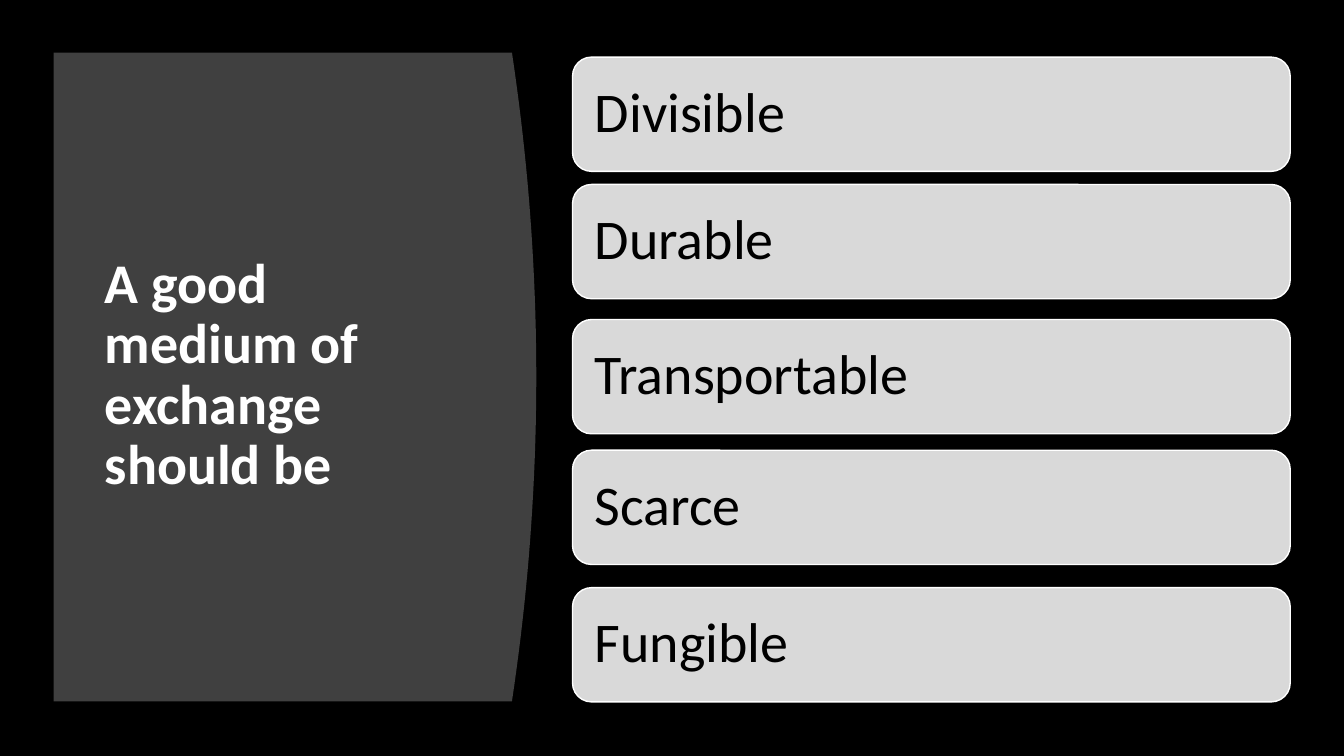
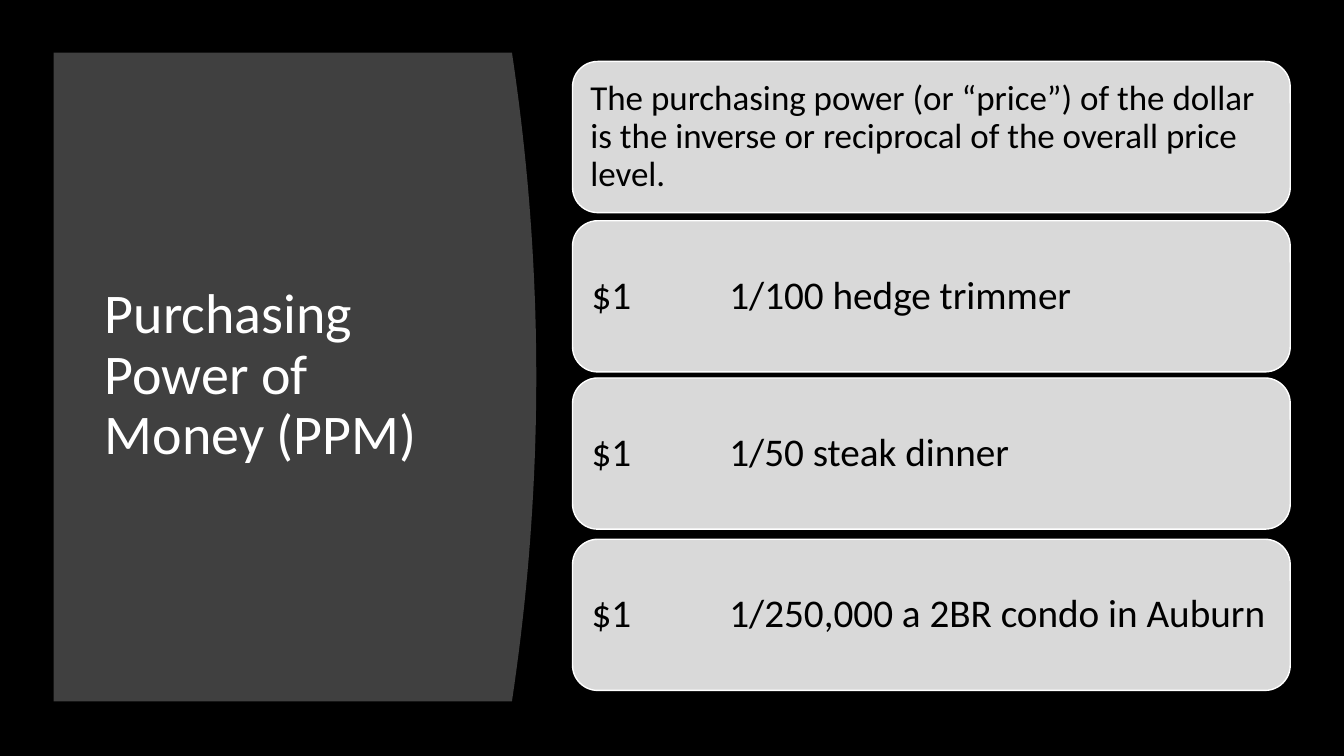
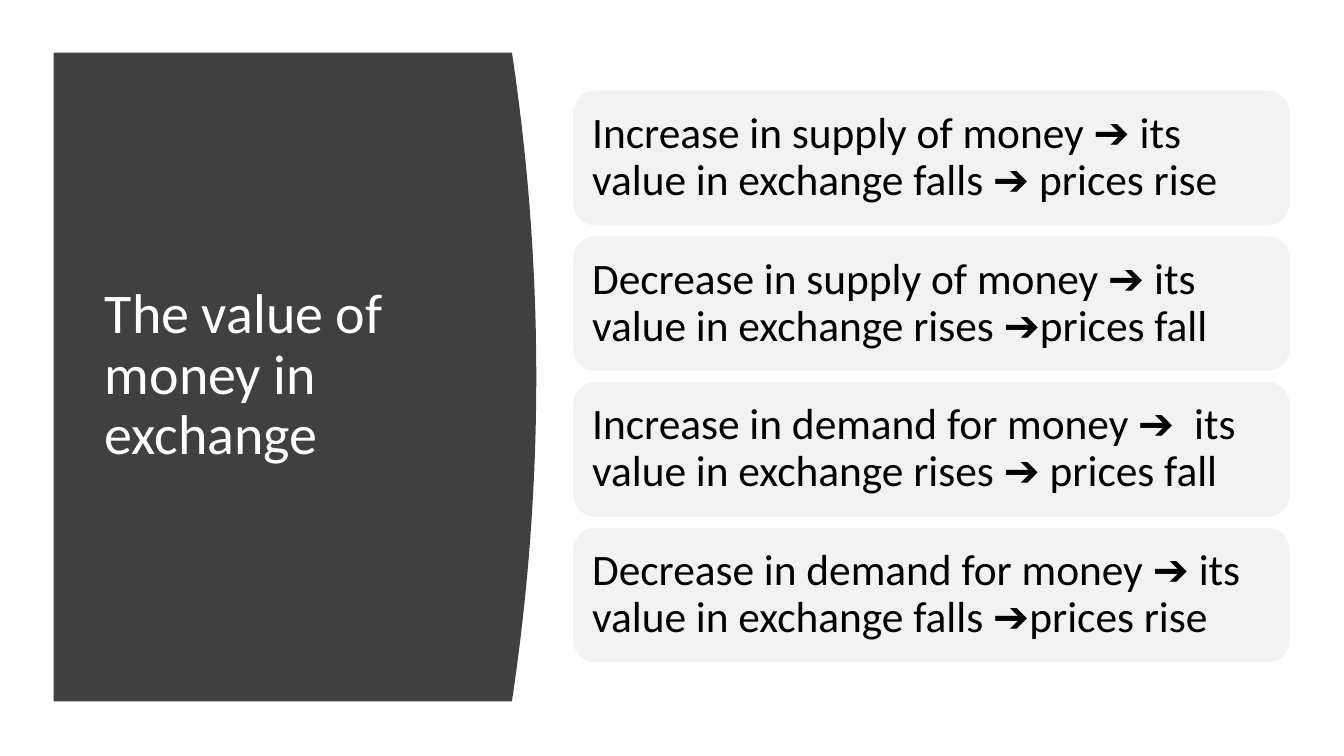
"""Build three slides on money, each with a curved title panel and a stack of cards."""
import lxml.etree
import pptx
import pptx.dml.color
import pptx.enum.shapes
import pptx.enum.text
import pptx.oxml.ns
import pptx.util

COLOURS = {
    "night": "000000",
    "paper": "FFFFFF",
    "panel": "404040",
    "silver": "D9D9D9",
    "mist": "F2F2F2",
}
COLUMNS, ROWS = 160, 90
CURVE_STEPS = 40


def colour(name):
    """Return the named colour of the palette."""
    return pptx.dml.color.RGBColor.from_string(COLOURS[name])


class Deck:
    """Hold the shared style, the presentation and the current slide."""

    font = "Calibri"
    title_size = 40
    line_spacing = 0.9
    panel_left, panel_top, panel_right, panel_bottom = 6.4, 6.25, 60.95, 83.5
    panel_bulge = 2.9
    title_area = (11.28, 13.32, 44.88, 62.88)
    card_left, card_width = 68.16, 85.44

    def __init__(self):
        """Start an empty widescreen presentation."""
        self.presentation = pptx.Presentation()
        self.presentation.slide_width = pptx.util.Emu(12192000)
        self.presentation.slide_height = pptx.util.Emu(6858000)
        self.slide = None

    def across(self, columns):
        """Convert grid columns to a length."""
        return pptx.util.Emu(round(self.presentation.slide_width * columns / COLUMNS))

    def down(self, rows):
        """Convert grid rows to a length."""
        return pptx.util.Emu(round(self.presentation.slide_height * rows / ROWS))

    def new_slide(self, backdrop, title, bold=False):
        """Add a slide with its backdrop, panel and title."""
        layout = self.presentation.slide_layouts.get_by_name("Title Only")
        self.slide = self.presentation.slides.add_slide(layout)
        self.slide.background.fill.solid()
        self.slide.background.fill.fore_color.rgb = colour(backdrop)
        self.panel()
        self.title(title, bold)

    def panel(self):
        """Draw the panel whose right side bulges outwards, behind the title."""
        half = (self.panel_bottom - self.panel_top) / 2
        edge = []
        for step in range(CURVE_STEPS + 1):
            offset = 2 * step / CURVE_STEPS - 1
            column = self.panel_right + self.panel_bulge * (1 - offset ** 2)
            row = self.panel_top + half * (1 + offset)
            edge.append((self.across(column), self.down(row)))
        left = self.across(self.panel_left)
        outline = self.slide.shapes.build_freeform(left, self.down(self.panel_top))
        outline.add_line_segments(edge + [(left, self.down(self.panel_bottom))])
        panel = outline.convert_to_shape()
        panel.shadow.inherit = False
        panel.fill.solid()
        panel.fill.fore_color.rgb = colour("panel")
        panel.line.fill.background()
        self.slide.shapes.title._element.addprevious(panel._element)

    def title(self, wording, bold):
        """Place and format the title."""
        heading = self.slide.shapes.title
        left, top, width, height = self.title_area
        heading.left, heading.top = self.across(left), self.down(top)
        heading.width, heading.height = self.across(width), self.down(height)
        self.set_wording(heading.text_frame, wording, self.title_size, "paper", bold)

    def set_wording(self, frame, wording, size, ink, bold=False):
        """Fill a text frame with one left-aligned paragraph centred vertically."""
        frame.text = wording
        frame.word_wrap = True
        frame.auto_size = pptx.enum.text.MSO_AUTO_SIZE.NONE
        frame.vertical_anchor = pptx.enum.text.MSO_ANCHOR.MIDDLE
        paragraph = frame.paragraphs[0]
        paragraph.alignment = pptx.enum.text.PP_ALIGN.LEFT
        paragraph.line_spacing = self.line_spacing
        for run in paragraph.runs:
            run.font.name = self.font
            run.font.size = pptx.util.Pt(size)
            run.font.bold = bold
            run.font.color.rgb = colour(ink)

    def card(self, wording, top, height, fill, size, inset):
        """Draw one rounded card with its wording."""
        card = self.slide.shapes.add_shape(
            pptx.enum.shapes.MSO_SHAPE.ROUNDED_RECTANGLE,
            self.across(self.card_left), self.down(top),
            self.across(self.card_width), self.down(height))
        card.shadow.inherit = False
        card.fill.solid()
        card.fill.fore_color.rgb = colour(fill)
        card.line.color.rgb = colour("paper")
        card.line.width = pptx.util.Pt(1)
        frame = card.text_frame
        frame.margin_left = frame.margin_right = self.across(inset)
        frame.margin_top = frame.margin_bottom = self.down(inset)
        self.set_wording(frame, wording, size, "night")
        if "\t" in wording:
            self.tab_stop(frame.paragraphs[0], 16.4)

    def tab_stop(self, paragraph, column):
        """Set a left tab stop."""
        qn = pptx.oxml.ns.qn
        stops = lxml.etree.SubElement(paragraph._p.get_or_add_pPr(), qn("a:tabLst"))
        lxml.etree.SubElement(
            stops, qn("a:tab"), pos=str(int(self.across(column))), algn="l")


def main():
    """Build and save the deck."""
    deck = Deck()

    deck.new_slide("night", "A good medium of exchange should be", bold=True)
    qualities = {"Divisible": 6.8, "Durable": 21.96, "Transportable": 38.04,
                 "Scarce": 53.6, "Fungible": 69.96}
    for quality, top in qualities.items():
        deck.card(quality, top, 13.6, "silver", size=40, inset=2)

    deck.new_slide("night", "Purchasing Power of Money (PPM)")
    deck.card("The purchasing power (or “price”) of the dollar is the inverse "
              "or reciprocal of the overall price level.",
              7.32, 18, "silver", size=25, inset=1.25)
    dollar_buys = {"1/100 hedge trimmer": 26.28, "1/50 steak dinner": 45,
                   "1/250,000 a 2BR condo in Auburn": 64.2}
    for goods, top in dollar_buys.items():
        deck.card(f"$1\t{goods}", top, 18, "silver", size=28, inset=1.4)

    deck.new_slide("paper", "The value of money in exchange")
    effects = [
        "Increase in supply of money ➔ its value in exchange falls ➔ prices rise",
        "Decrease in supply of money ➔ its value in exchange rises ➔prices fall",
        "Increase in demand for money ➔  its value in exchange rises ➔ prices fall",
        "Decrease in demand for money ➔ its value in exchange falls ➔prices rise",
    ]
    for place, effect in enumerate(effects):
        deck.card(effect, 10.7 + 17.35 * place, 16.2, "mist", size=31, inset=1.55)

    deck.presentation.save("out.pptx")


if __name__ == "__main__":
    main()
